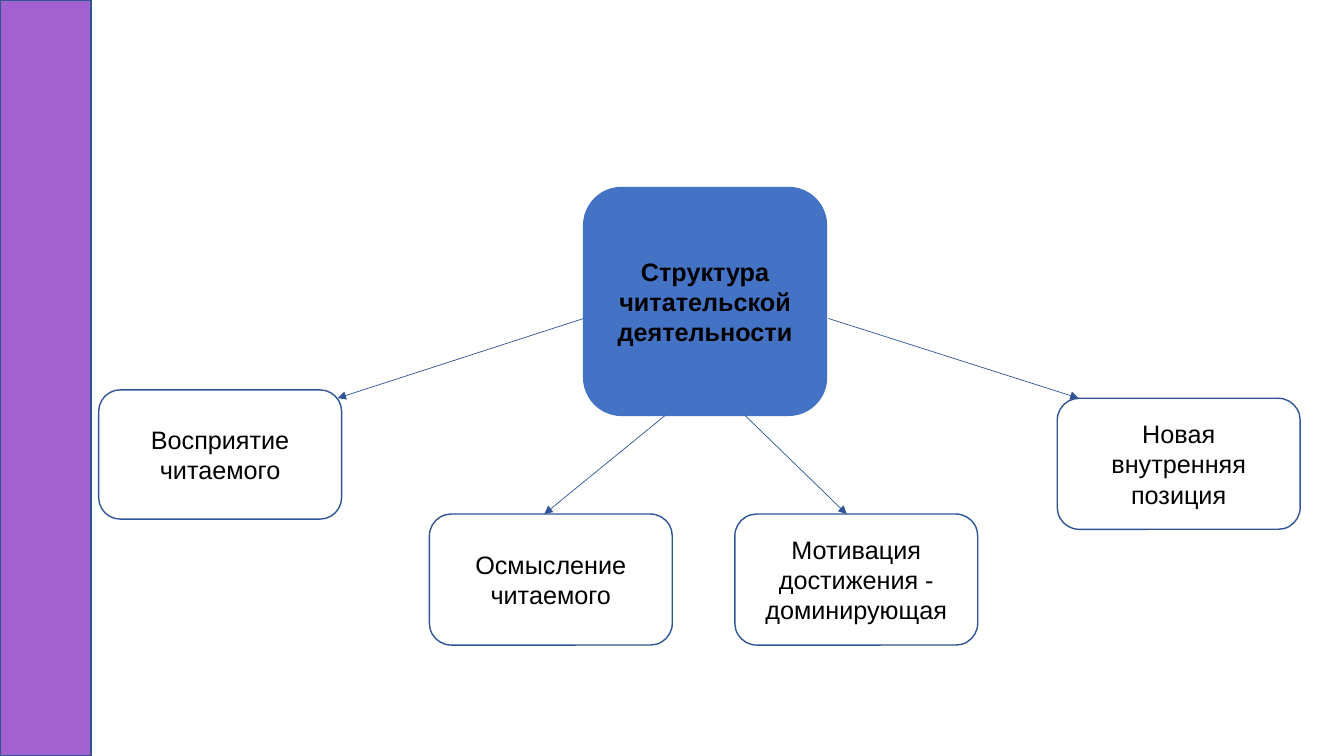
from lxml import etree
from pptx import Presentation
from pptx.dml.color import RGBColor
from pptx.enum.shapes import MSO_CONNECTOR, MSO_SHAPE
from pptx.enum.text import MSO_ANCHOR, PP_ALIGN
from pptx.oxml.ns import qn
from pptx.util import Pt

RECTANGLE = MSO_SHAPE.RECTANGLE
ROUNDED = MSO_SHAPE.ROUNDED_RECTANGLE
STRAIGHT = MSO_CONNECTOR.STRAIGHT
MIDDLE = MSO_ANCHOR.MIDDLE
CENTER = PP_ALIGN.CENTER

OUTLINE = "2F5597"
BLUE = "4472C4"
BOX_WIDTH = 173.5

COMPONENTS = [
    ("Восприятие читаемого", 70.5, 278.5, 92.3),
    ("Осмысление читаемого", 306.7, 367.2, 93.6),
    ("Мотивация достижения - доминирующая", 524.9, 367.2, 93.6),
    ("Новая внутренняя позиция", 755.2, 284.5, 93.6),
]
ARROWS = [
    ((416.9, 227.5), (241.2, 284.4)),
    ((475.2, 296.7), (388.8, 367.2)),
    ((532.1, 296.7), (604.8, 367.2)),
    ((591.8, 227.5), (770.4, 284.4)),
]


def color(value):
    """Return the colour for a hex string."""
    return RGBColor.from_string(value)


def add_panel(slide, kind, left, top, width, height, fill, outline):
    """Add a preset shape with an optional fill and a thin outline."""
    shape = slide.shapes.add_shape(kind, Pt(left), Pt(top), Pt(width), Pt(height))
    shape.shadow.inherit = False
    if fill:
        shape.fill.solid()
        shape.fill.fore_color.rgb = color(fill)
    else:
        shape.fill.background()
    shape.line.color.rgb = color(outline)
    shape.line.width = Pt(1)
    return shape


def add_box(slide, text, left, top, height, fill=None, outline=OUTLINE, bold=False):
    """Add a rounded box with centred text."""
    shape = add_panel(slide, ROUNDED, left, top, BOX_WIDTH, height, fill, outline)
    frame = shape.text_frame
    frame.word_wrap = True
    frame.vertical_anchor = MIDDLE
    paragraph = frame.paragraphs[0]
    paragraph.text = text
    paragraph.alignment = CENTER
    paragraph.font.name = "Arial"
    paragraph.font.size = Pt(18)
    paragraph.font.bold = bold
    paragraph.font.color.rgb = color("000000")


def add_arrow(slide, start, end):
    """Add a thin straight arrow between two points."""
    connector = slide.shapes.add_connector(
        STRAIGHT, *(Pt(length) for length in start + end)
    )
    connector.line.color.rgb = color(OUTLINE)
    connector.line.width = Pt(0.5)
    line = connector.line._get_or_add_ln()
    etree.SubElement(line, qn("a:tailEnd"), type="triangle")
    etree.SubElement(connector._element.spPr, qn("a:effectLst"))


def main():
    """Build the diagram of reading activity."""
    presentation = Presentation()
    presentation.slide_width = Pt(960)
    presentation.slide_height = Pt(540)
    slide = presentation.slides.add_slide(presentation.slide_layouts[6])
    add_panel(slide, RECTANGLE, 0, 0, 65, 540, "A162D0", "325491")
    for text, left, top, height in COMPONENTS:
        add_box(slide, text, left, top, height)
    add_box(slide, "Структура читательской деятельности", 416.9, 133.9, 162.8,
            fill=BLUE, outline=BLUE, bold=True)
    for start, end in ARROWS:
        add_arrow(slide, start, end)
    presentation.save("out.pptx")


if __name__ == "__main__":
    main()
